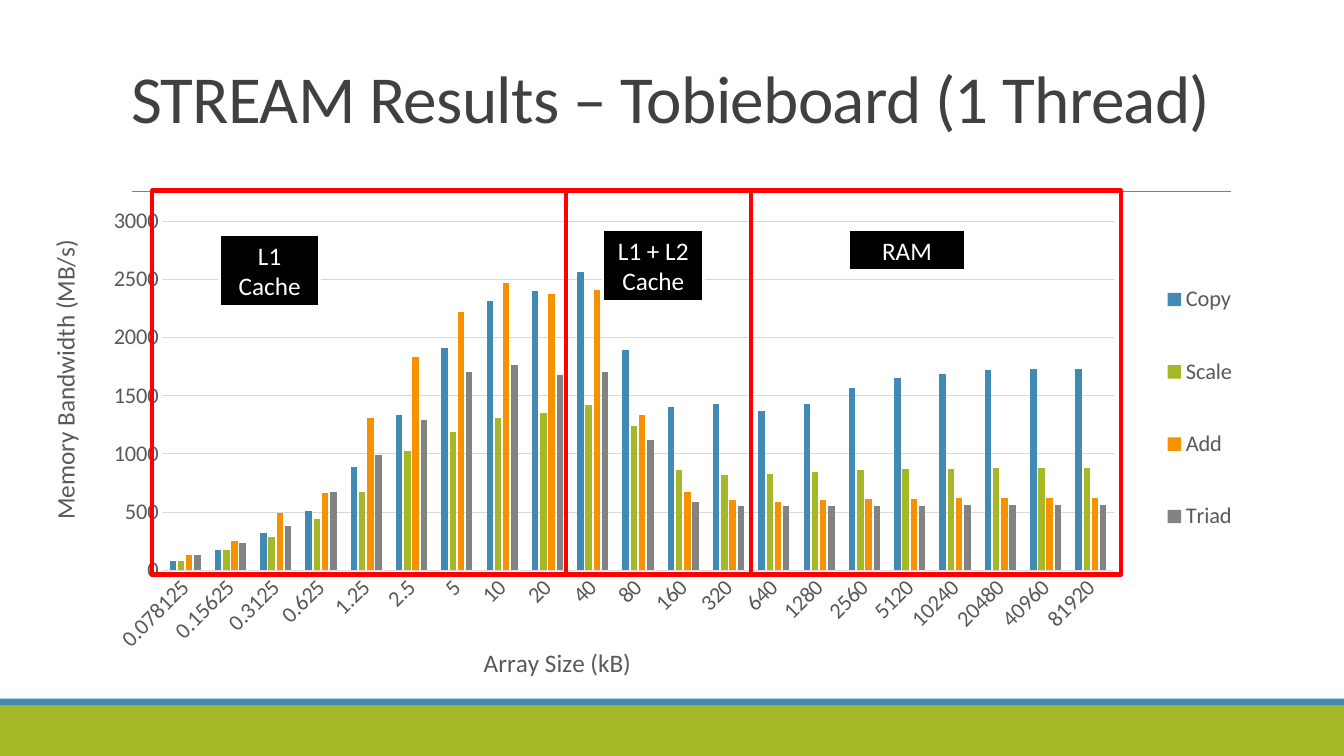
from lxml import etree
from pptx import Presentation, util as u
from pptx.chart import data
from pptx.dml.color import RGBColor
from pptx.enum import chart as kinds, shapes, text
from pptx.oxml import parse_xml
from pptx.oxml.ns import nsdecls, qn

SIZES = ["0.078125", "0.15625", "0.3125", "0.625", "1.25", "2.5"] + [str(5 * 2 ** n) for n in range(15)]
RATES = {
    "Copy": ("418AB3", [80, 170, 320, 510, 890, 1330, 1910, 2310, 2400, 2560, 1890,
                        1400, 1430, 1370, 1430, 1570, 1650, 1690, 1720, 1730, 1730]),
    "Scale": ("A6B727", [80, 170, 290, 440, 670, 1020, 1190, 1310, 1350, 1420, 1240,
                         860, 820, 830, 840, 860, 870, 870, 880, 880, 880]),
    "Add": ("F69200", [130, 250, 490, 660, 1310, 1830, 2220, 2470, 2370, 2410, 1330,
                       670, 600, 590, 600, 610, 610, 620, 620, 620, 620]),
    "Triad": ("838383", [130, 230, 380, 670, 990, 1290, 1700, 1760, 1680, 1700, 1120,
                         590, 550, 550, 550, 550, 550, 560, 560, 560, 560]),
}


def tint(code):
    return RGBColor.from_string(code)


def place(part, x, y, w=None, h=None, inner=False):
    old = part.find(qn("c:layout"))
    if old is not None:
        part.remove(old)
    tags = [("layoutTarget", "inner")] if inner else []
    tags += [("xMode", "edge"), ("yMode", "edge"), ("x", x), ("y", y)]
    if w:
        tags += [("w", w), ("h", h)]
    body = "".join(f'<c:{tag} val="{val}"/>' for tag, val in tags)
    node = parse_xml(f'<c:layout {nsdecls("c")}><c:manualLayout>{body}</c:manualLayout></c:layout>')
    heads = [kid for kid in part if kid.tag in (qn("c:tx"), qn("c:legendPos"))]
    part.insert(part.index(heads[-1]) + 1 if heads else 0, node)


class Deck:
    """Holds the style and the current slide; lengths are percent of its size."""

    face, ink, grey, red = "Calibri", "595959", "D9D9D9", "FF0000"

    def __init__(self):
        self.show = Presentation()
        self.show.slide_width, self.show.slide_height = u.Inches(13.33), u.Inches(7.5)
        self.slide = self.show.slides.add_slide(self.show.slide_layouts[5])

    def spot(self, *spans):
        sides = (self.show.slide_width, self.show.slide_height) * 2
        return [round(side * span / 100) for side, span in zip(sides, spans)]

    def font(self, font, size, color):
        font.name, font.size, font.bold = self.face, u.Pt(size), False
        font.color.rgb = tint(color)

    def words(self, para, line, size, color):
        run = para.add_run()
        run.text = line
        self.font(run.font, size, color)
        return run

    def title(self, line, *box):
        head = self.slide.shapes.title
        head.left, head.top, head.width, head.height = self.spot(*box)
        frame = head.text_frame
        frame.vertical_anchor, frame.word_wrap = text.MSO_ANCHOR.BOTTOM, True
        frame.auto_size = text.MSO_AUTO_SIZE.NONE
        para = frame.paragraphs[0]
        para.alignment, para.line_spacing = text.PP_ALIGN.LEFT, 0.85
        run = self.words(para, line, 48, "404040")
        run.font._element.set("spc", "-50")

    def rect(self, box, fill=None, line=None, width=1):
        shape = self.slide.shapes.add_shape(shapes.MSO_SHAPE.RECTANGLE, *self.spot(*box))
        shape.shadow.inherit = False
        if fill:
            shape.fill.solid()
            shape.fill.fore_color.rgb = tint(fill)
        else:
            shape.fill.background()
        if line:
            shape.line.color.rgb, shape.line.width = tint(line), u.Pt(width)
        else:
            shape.line.fill.background()
        return shape

    def label(self, lines, *box):
        frame = self.rect(box, "000000", "FFFFFF", 2).text_frame
        frame.vertical_anchor = text.MSO_ANCHOR.MIDDLE
        for n, line in enumerate(lines):
            para = frame.add_paragraph() if n else frame.paragraphs[0]
            para.alignment = text.PP_ALIGN.CENTER
            self.words(para, line, 18, "FFFFFF")

    def rule(self, *ends):
        line = self.slide.shapes.add_connector(shapes.MSO_CONNECTOR.STRAIGHT, *self.spot(*ends))
        line.line.color.rgb, line.line.width = tint("808080"), u.Pt(0.5)
        etree.SubElement(line._element.spPr, qn("a:effectLst"))

    def axis(self, axis, name, x, y):
        axis.major_tick_mark = axis.minor_tick_mark = kinds.XL_TICK_MARK.NONE
        self.font(axis.tick_labels.font, 16, self.ink)
        self.words(axis.axis_title.text_frame.paragraphs[0], name, 18, self.ink)
        place(axis.axis_title._element, x, y)

    def chart(self, cats, rates, *box):
        feed = data.CategoryChartData(number_format="General")
        feed.categories = cats
        for name, (_, vals) in rates.items():
            feed.add_series(name, vals)
        kind = kinds.XL_CHART_TYPE.COLUMN_CLUSTERED
        chart = self.slide.shapes.add_chart(kind, *self.spot(*box), feed).chart
        self.font(chart.font, 10, "000000")
        chart.has_title = False
        plot = chart.plots[0]
        plot.gap_width, plot.overlap, plot.vary_by_categories = 219, -27, False
        for bars, (color, _) in zip(plot.series, rates.values()):
            bars.format.fill.solid()
            bars.format.fill.fore_color.rgb = tint(color)
        place(chart._chartSpace.chart.plotArea, 0.113, 0.144, 0.772, 0.637, True)
        base, side = chart.category_axis, chart.value_axis
        self.axis(base, "Array Size (kB)", 0.37, 0.91)
        self.axis(side, "Memory Bandwidth (MB/s)", 0.016, 0.17)
        base.tick_labels.font._element.getparent().getparent().getparent().find(
            qn("a:bodyPr")).set("rot", "-2700000")
        side.minimum_scale, side.maximum_scale, side.major_unit = 0, 3000, 500
        side.format.line.fill.background()
        for line in (base.format.line, side.major_gridlines.format.line):
            line.color.rgb, line.width = tint(self.grey), u.Pt(0.75)
        chart.has_legend = True
        key = chart.legend
        key.position, key.include_in_layout = kinds.XL_LEGEND_POSITION.RIGHT, False
        self.font(key.font, 16, self.ink)
        place(key._element, 0.915, 0.18, 0.08, 0.61)


def main():
    deck = Deck()
    deck.rect((0, 93.33, 100, 6.67), "A6B727")
    deck.rect((0, 92.4, 100, 0.93), "418AB3")
    deck.rule(9.83, 25.33, 91.6, 25.33)
    deck.title("STREAM Results – Tobieboard (1 Thread)", 9, -2.4, 82.5, 21.2)
    deck.chart(SIZES, RATES, 1.73, 18.8, 91.67, 72.53)
    edges = [11.33, 42.1, 55.87, 83.4]
    for left, right in zip(edges, edges[1:]):
        deck.rect((left, 25.2, right - left, 50.8), line=deck.red, width=3)
    deck.label(["L1", "Cache"], 16.35, 31.07, 7.43, 9.5)
    deck.label(["L1 + L2", "Cache"], 44.86, 30.4, 7.5, 9.5)
    deck.label(["RAM"], 63.17, 30.4, 8.63, 5.33)
    deck.show.save("out.pptx")


if __name__ == "__main__":
    main()
